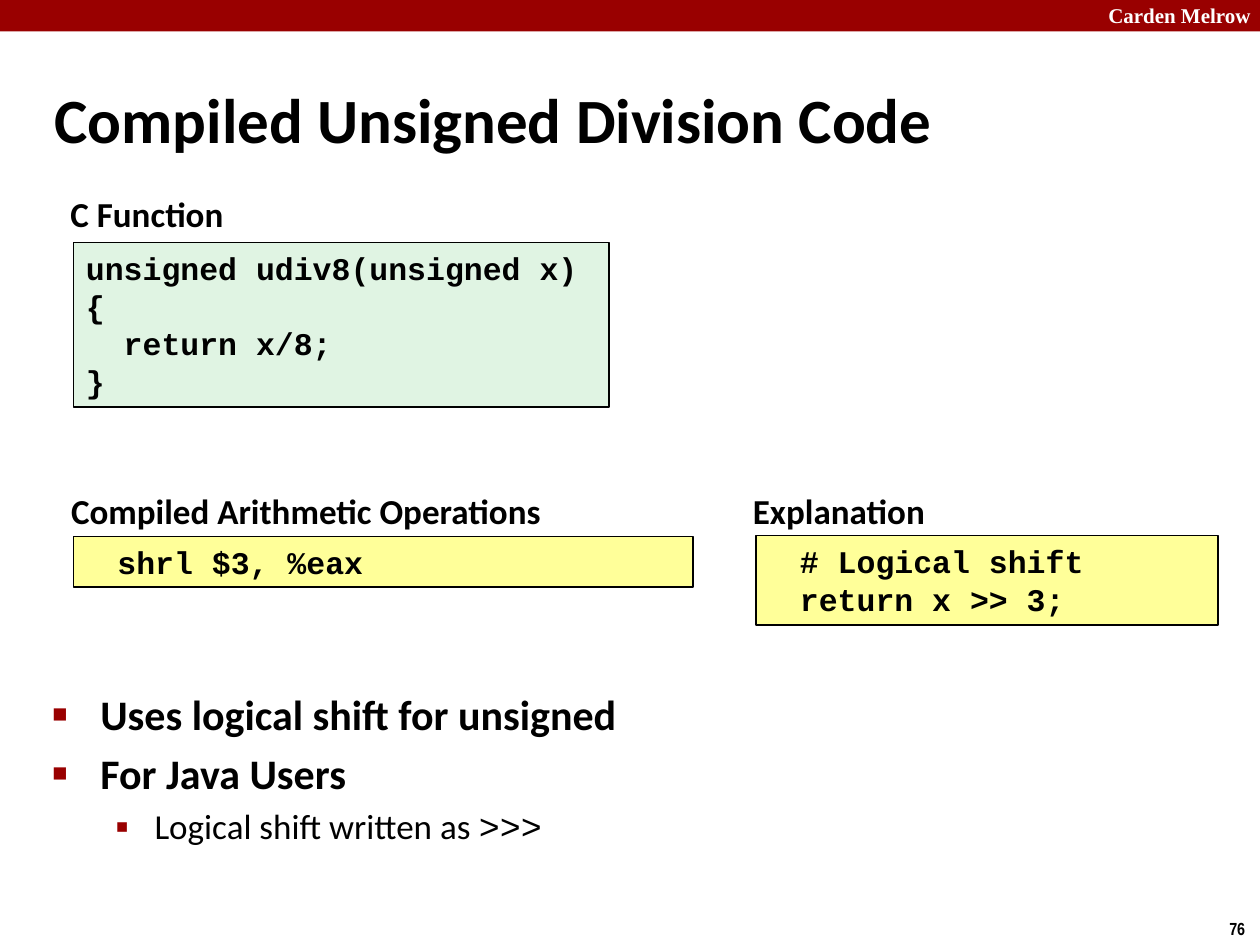
from lxml.etree import SubElement
from pptx import Presentation
from pptx.dml.color import RGBColor
from pptx.enum.shapes import MSO_SHAPE as Shape
from pptx.enum.text import MSO_ANCHOR as Anchor, MSO_AUTO_SIZE as Fit, PP_ALIGN as Align
from pptx.oxml.ns import qn
from pptx.util import Inches, Pt

color = RGBColor.from_string
RED, BLACK, WHITE, GREEN, YELLOW = "990000", "000000", "FFFFFF", "E0F4E3", "FFFF99"

deck = Presentation()
deck.slide_width, deck.slide_height = Inches(10), Inches(7.5)
page = deck.slides.add_slide(deck.slide_layouts[1])
CELL = deck.slide_width / 120  # grid of 120 columns by 90 rows


def grid(*cells):
    """Turn left, top, width and height in grid cells into lengths."""
    return [round(cell * CELL) for cell in cells]


def write(box, text, font="Calibri", size=20, ink=BLACK, bold=True,
          align=Align.LEFT, level=0, margin=0, hang=0, bullet=None, tab=0, same_line=False):
    """Add a paragraph, or a span on the last one; lengths in inches."""
    frame = box.text_frame
    para = frame.paragraphs[-1]
    if para.runs and not same_line:
        para = frame.add_paragraph()
    if not same_line:
        para.alignment, para.level = align, level
        props = para._p.get_or_add_pPr()
        if margin:
            props.set("marL", str(Inches(margin)))
            props.set("indent", str(Inches(-hang)))
        if bullet:
            mark, percent = bullet
            tint = SubElement(props, qn("a:buClr"))
            SubElement(tint, qn("a:srgbClr"), val=RED)
            SubElement(props, qn("a:buSzPct"), val=str(percent * 1000))
            SubElement(props, qn("a:buChar"), char=mark)
        if tab:
            stops = SubElement(props, qn("a:tabLst"))
            SubElement(stops, qn("a:tab"), pos=str(Inches(tab)), algn="l")
    span = para.add_run()
    span.text = text
    span.font.name, span.font.size, span.font.bold = font, Pt(size), bold
    span.font.color.rgb = color(ink)


# Top band, institution and page number
band = page.shapes.add_shape(Shape.RECTANGLE, *grid(0, 0, 120, 3))
band.shadow.inherit = False
band.fill.solid()
band.fill.fore_color.rgb = color(RED)
band.line.fill.background()

school = page.shapes.add_textbox(*grid(101, -0.3, 19.3, 3.6))
school.text_frame.word_wrap = True
write(school, "Carden Melrow", font="Times New Roman", size=12, ink=WHITE, align=Align.RIGHT)

number = page.shapes.add_textbox(*grid(115.9, 86.8, 4.1, 3.2))
number.text_frame.word_wrap = False
write(number, "76", font="Arial Narrow", size=10)

# Title and bullet list
title, body = page.placeholders
title.left, title.top, title.width, title.height = grid(4, 7.5, 104, 7.6)
title.text_frame.vertical_anchor = Anchor.MIDDLE
body.left, body.top, body.width, body.height = grid(3.8, 65, 109, 15.6)
for holder in (title, body):
    holder.text_frame.auto_size = Fit.NONE

write(title, "Compiled Unsigned Division Code", size=36)
for point in ("Uses logical shift for unsigned", "For Java Users"):
    write(body, point, size=24, margin=0.38, hang=0.38, bullet=("■", 60))
write(body, "Logical shift written as ", bold=False, level=1,
      margin=0.81, hang=0.31, bullet=("▪", 110))
write(body, ">>>", font="Courier New", bold=False, same_line=True)

# Code boxes: cells, fill, then lines as (text, left margin, tab stop)
code_boxes = [
    ((7, 23.1, 51, 15.7), GREEN, [("unsigned udiv8(unsigned x)", 0, 0), ("{", 0, 0),
                                  ("return x/8;", 0.3, 0), ("}", 0, 0)]),
    ((7, 51.1, 59, 4.8), YELLOW, [("\tshrl\t$3, %eax", 0, 0.25)]),
    ((72, 51, 44, 8.5), YELLOW, [("\t# Logical shift", 0, 0.25),
                                 ("\treturn x >> 3;", 0, 0.25)]),
]
for cells, fill, lines in code_boxes:
    box = page.shapes.add_shape(Shape.RECTANGLE, *grid(*cells))
    box.shadow.inherit = False
    box.fill.solid()
    box.fill.fore_color.rgb = color(fill)
    box.line.color.rgb = color(BLACK)
    box.line.width = Pt(1)
    box.text_frame.word_wrap = True
    box.text_frame.vertical_anchor = Anchor.TOP
    box.text_frame.auto_size = Fit.SHAPE_TO_FIT_TEXT
    for text, margin, tab in lines:
        write(box, text, font="Courier New", size=18, margin=margin, tab=tab)

# Headings above the code boxes
headings = [("C Function", 6, 17.7, 16), ("Compiled Arithmetic Operations", 6, 46, 46.3),
            ("Explanation", 71, 46, 17.8)]
for text, left, top, width in headings:
    label = page.shapes.add_textbox(*grid(left, top, width, 5.3))
    frame = label.text_frame
    frame.word_wrap = False
    frame.margin_left = frame.margin_right = Inches(0.05)
    write(label, text, align=Align.CENTER)

deck.save("out.pptx")
